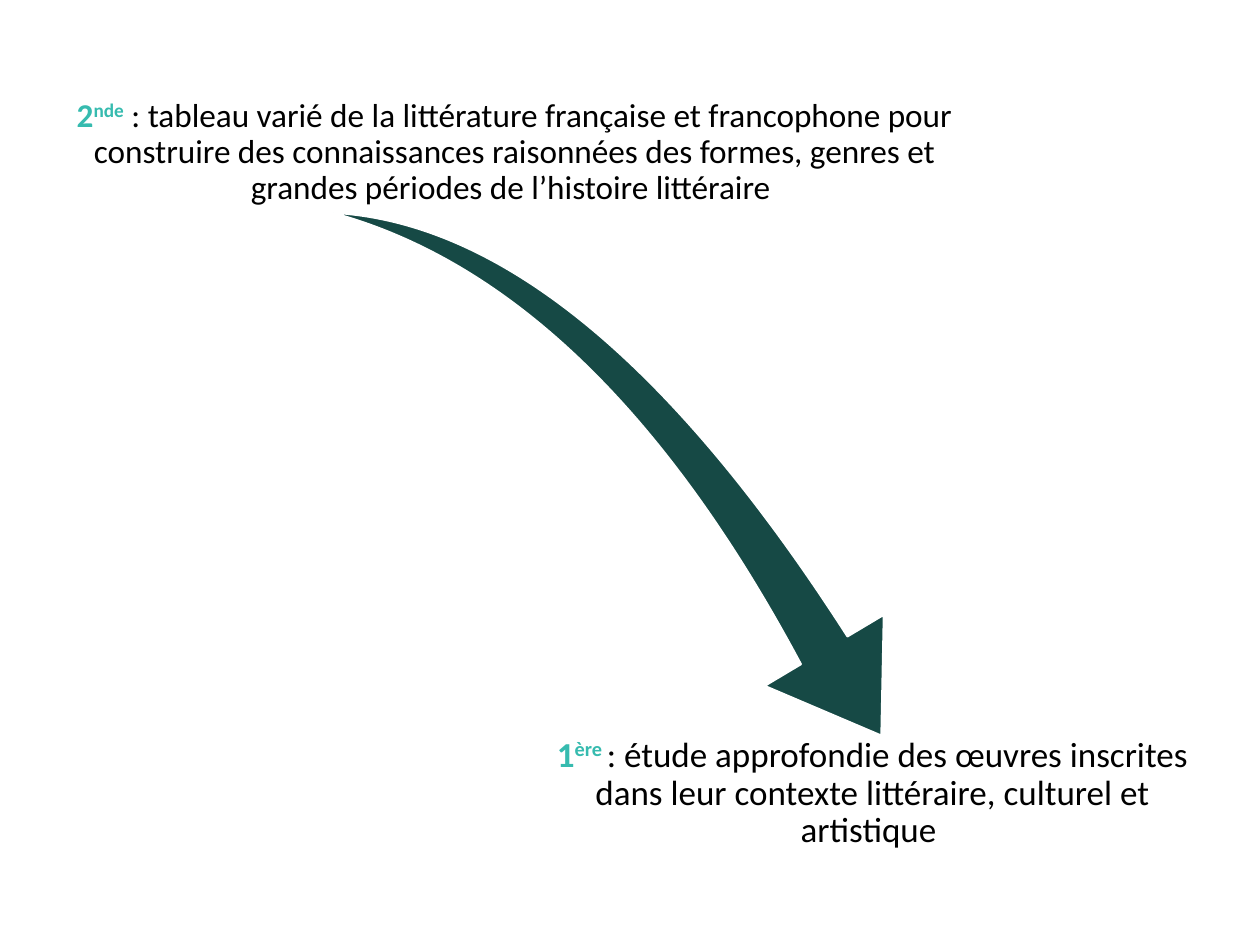
from pptx import Presentation
from pptx.dml.color import RGBColor
from pptx.enum.shapes import MSO_SHAPE as Preset
from pptx.enum.text import MSO_ANCHOR as Anchor, PP_ALIGN as Align
from pptx.util import Pt

EMU_PER_PX = 914400 / 126
TEAL, DARK_TEAL, BLACK, WHITE = "36BBAF", "164945", "000000", "FFFFFF"


def px(length):
    """Turn pixels into EMU."""
    return round(length * EMU_PER_PX)


def colour(hex_string):
    """Turn a hex string into a colour."""
    return RGBColor.from_string(hex_string)


def add_span(para, text, size, hex_string, bold=False, raised=False):
    """Add one formatted run to a paragraph."""
    span = para.add_run()
    span.text = text
    font = span.font
    font.name, font.size, font.bold = "Calibri", Pt(size), bold
    font.color.rgb = colour(hex_string)
    if raised:
        font._element.set("baseline", "30000")


def add_level(page, area, anchor, size, number, suffix, description):
    """Add a school level with its raised suffix and description."""
    box = page.shapes.add_textbox(*map(px, area))
    frame = box.text_frame
    frame.word_wrap = True
    frame.vertical_anchor = anchor
    frame.margin_left = frame.margin_right = px(4)
    frame.margin_top = frame.margin_bottom = px(4)
    para = frame.paragraphs[0]
    para.alignment = Align.CENTER
    para.line_spacing = 0.9
    add_span(para, number, size, TEAL, bold=True)
    add_span(para, suffix, size, TEAL, bold=True, raised=True)
    add_span(para, description, size, BLACK)


def add_swoosh(page, area, rotation, adjustments):
    """Add the curved arrow that leads from one level to the next."""
    arrow = page.shapes.add_shape(Preset.SWOOSH_ARROW, *map(px, area))
    arrow.shadow.inherit = False
    arrow.rotation = rotation
    for index, value in enumerate(adjustments):
        arrow.adjustments[index] = value
    arrow.fill.solid()
    arrow.fill.fore_color.rgb = colour(DARK_TEAL)
    arrow.line.color.rgb = colour(WHITE)
    arrow.line.width = Pt(1)


def main():
    """Build and save the slide."""
    deck = Presentation()
    deck.slide_width, deck.slide_height = px(1260), px(945)
    page = deck.slides.add_slide(deck.slide_layouts[6])
    add_swoosh(page, (280, 296, 702, 335), 65.6, (0.16, 0.31))
    add_level(page, (40, 88, 949, 123), Anchor.BOTTOM, 19, "2", "nde",
              " : tableau varié de la littérature française et francophone pour "
              "construire des connaissances raisonnées des formes, genres et "
              "grandes périodes de l’histoire littéraire ")
    add_level(page, (529, 733, 687, 123), Anchor.TOP, 20, "1", "ère ",
              ": étude approfondie des œuvres inscrites dans leur contexte "
              "littéraire, culturel et artistique ")
    deck.save("out.pptx")


if __name__ == "__main__":
    main()
